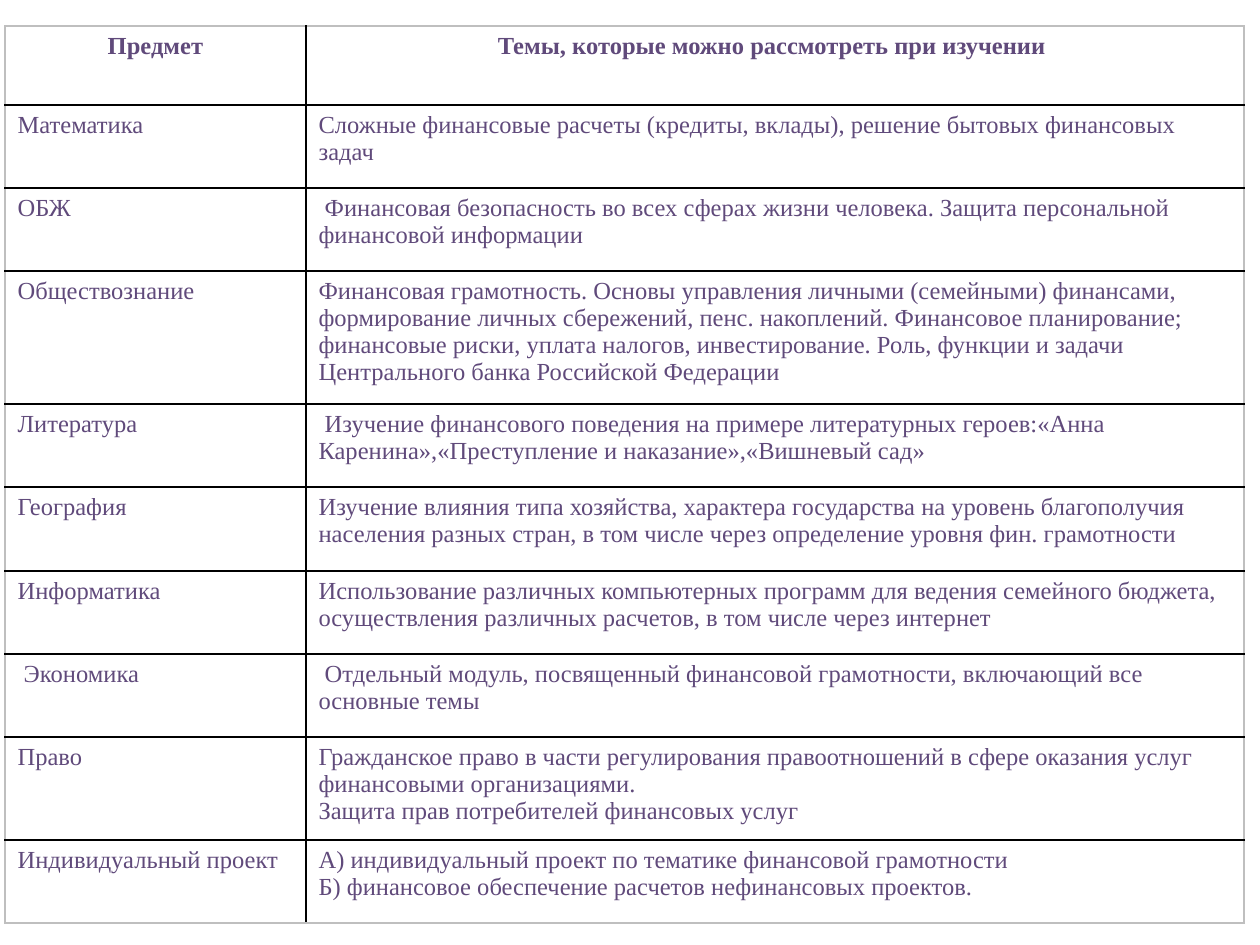
from copy import deepcopy

from pptx import Presentation
from pptx.dml.color import RGBColor as RGB
from pptx.enum.text import PP_ALIGN as Align
from pptx.oxml import parse_xml
from pptx.oxml.ns import nsdecls, qn
from pptx.util import Emu, Pt

SCALE = 914400 / 126
FONT = "Times New Roman"
PURPLE = RGB(0x60, 0x4A, 0x7B)
BLACK = RGB(0x00, 0x00, 0x00)
GRAY = RGB(0xBF, 0xBF, 0xBF)

COLS = [301, 938]
HEIGHTS = [79, 83, 83, 133, 83, 84, 83, 83, 103, 83]
ROWS = [
    ("Предмет", "Темы, которые можно рассмотреть при изучении "),
    ("Математика",
     "Сложные финансовые расчеты (кредиты, вклады), решение бытовых "
     "финансовых задач"),
    ("ОБЖ",
     " Финансовая безопасность во всех сферах жизни человека. Защита "
     "персональной финансовой информации"),
    ("Обществознание",
     "Финансовая грамотность. Основы управления личными (семейными) "
     "финансами, формирование личных сбережений, пенс. накоплений. "
     "Финансовое планирование; финансовые риски, уплата налогов, "
     "инвестирование. Роль, функции и задачи Центрального банка "
     "Российской Федерации"),
    ("Литература",
     " Изучение финансового поведения на примере литературных "
     "героев:«Анна Каренина»,«Преступление и наказание»,«Вишневый сад»"),
    ("География",
     "Изучение влияния типа хозяйства, характера государства на уровень "
     "благополучия населения разных стран, в том числе через определение "
     "уровня фин. грамотности"),
    ("Информатика",
     "Использование различных компьютерных программ для ведения семейного "
     "бюджета, осуществления различных расчетов, в том числе через интернет"),
    (" Экономика",
     " Отдельный модуль, посвященный финансовой грамотности, включающий "
     "все основные темы"),
    ("Право",
     "Гражданское право в части регулирования правоотношений в сфере "
     "оказания услуг финансовыми организациями.\v"
     "Защита прав потребителей финансовых услуг"),
    ("Индивидуальный проект",
     "А) индивидуальный проект по тематике финансовой грамотности\v"
     "Б) финансовое обеспечение расчетов нефинансовых проектов."),
]


def px(n):
    """Turn pixels into EMU."""
    return Emu(round(n * SCALE))


def write(frame, text, size=14, color=PURPLE, bold=False, align=Align.LEFT):
    """Put formatted text into a text frame."""
    para = frame.paragraphs[0]
    para.text = text
    para.alignment = align
    for run in para.runs:
        font = run.font
        font.name, font.size, font.bold = FONT, Pt(size), bold
        font.color.rgb = color
    for br in para._p.findall(qn("a:br")):
        br.insert(0, deepcopy(para.runs[0]._r.rPr))


def edge(cell, side, color):
    """Draw one border of a cell."""
    cell._tc.get_or_add_tcPr().append(parse_xml(
        f'<a:ln{side} {nsdecls("a")} w="{Pt(1)}"><a:solidFill>'
        f'<a:srgbClr val="{color}"/></a:solidFill></a:ln{side}>'))


def topics(slide, left, top, cols, heights, rows):
    """Build the table of subjects and topics in its box."""
    table = slide.shapes.add_table(
        len(rows), len(cols), px(left), px(top),
        px(sum(cols)), px(sum(heights))).table
    for col, width in zip(table.columns, cols):
        col.width = px(width)
    for row, height in zip(table.rows, heights):
        row.height = px(height)
    for i, texts in enumerate(rows):
        head = i == 0
        for j, text in enumerate(texts):
            cell = table.cell(i, j)
            outer = {"L": j == 0, "R": j == len(cols) - 1,
                     "T": head, "B": i == len(rows) - 1}
            for side, rim in outer.items():
                edge(cell, side, GRAY if rim else BLACK)
            cell.fill.background()
            write(cell.text_frame, text, bold=head,
                  align=Align.CENTER if head else Align.LEFT)


def main():
    """Build and save the slide."""
    deck = Presentation()
    deck.slide_width, deck.slide_height = px(1260), px(945)
    slide = deck.slides.add_slide(deck.slide_layouts[6])
    topics(slide, 5, 26, COLS, HEIGHTS, ROWS)
    deck.save("out.pptx")


if __name__ == "__main__":
    main()
